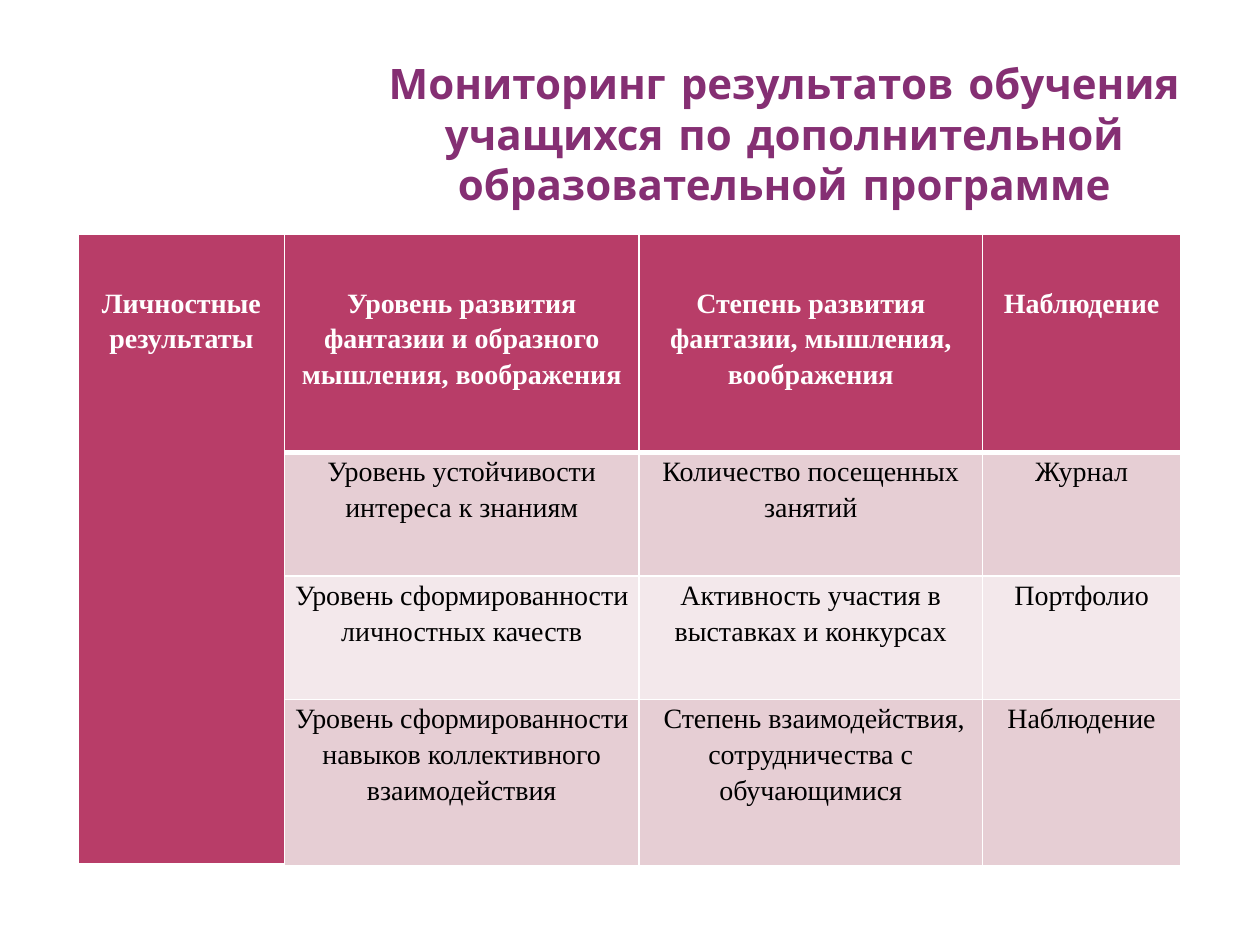
from lxml import etree
from pptx import Presentation
from pptx.dml.color import RGBColor
from pptx.enum.text import MSO_ANCHOR, PP_ALIGN
from pptx.oxml.ns import qn
from pptx.util import Inches, Pt

CENTER = PP_ALIGN.CENTER
TOP = MSO_ANCHOR.TOP

PLUM = RGBColor(0x85, 0x2F, 0x73)
ROSE = RGBColor(0xB8, 0x3D, 0x68)
PINK = RGBColor(0xE6, 0xCE, 0xD4)
PALE = RGBColor(0xF3, 0xE8, 0xEB)
WHITE = RGBColor(0xFF, 0xFF, 0xFF)
BLACK = RGBColor(0, 0, 0)

TITLE = "Мониторинг результатов обучения учащихся по дополнительной образовательной программе"
ROWS = [
    ["Личностные результаты", "Уровень развития фантазии и образного мышления, воображения",
     "Степень развития фантазии, мышления, воображения", "Наблюдение"],
    ["", "Уровень устойчивости интереса к знаниям", "Количество посещенных занятий", "Журнал"],
    ["", "Уровень сформированности личностных качеств",
     "Активность участия в выставках и конкурсах", "Портфолио"],
    ["", "Уровень сформированности навыков коллективного взаимодействия",
     " Степень взаимодействия, сотрудничества с обучающимися", "Наблюдение"],
]
WIDTHS = [1.64, 2.81, 2.73, 1.57]
HEIGHTS = [1.73, 0.98, 0.98, 1.32]
FILLS = [ROSE, PINK, PALE, PINK]


def write(frame, text, font="Times New Roman", size=16, color=BLACK, bold=False, line=1.0, after=0):
    """Put one centred paragraph of formatted text in a frame."""
    par = frame.paragraphs[0]
    par.alignment = CENTER
    par.line_spacing = line
    par.space_before = Pt(0)
    par.space_after = Pt(after)
    run = par.add_run()
    run.text = text
    run.font.name = font
    run.font.size = Pt(size)
    run.font.bold = bold
    run.font.color.rgb = color


def edge(cell, top, bottom):
    """Draw white borders around a cell, with widths in points."""
    props = cell._tc.get_or_add_tcPr()
    for side, width in (("L", 1), ("R", 1), ("T", top), ("B", bottom)):
        line = etree.SubElement(props, qn("a:ln" + side), w=str(Pt(width)))
        fill = etree.SubElement(line, qn("a:solidFill"))
        etree.SubElement(fill, qn("a:srgbClr"), val=str(WHITE))


def add_title(slide, left, top, width, height):
    """Place the heading in the title placeholder."""
    title = slide.shapes.title
    title.left, title.top, title.width, title.height = left, top, width, height
    frame = title.text_frame
    frame.word_wrap = True
    frame.vertical_anchor = TOP
    write(frame, TITLE, font="Comic Neue", size=24, color=PLUM, bold=True)


def add_grid(slide, left, top, width, height):
    """Place the results table with its merged first column."""
    table = slide.shapes.add_table(len(ROWS), len(WIDTHS), left, top, width, height).table
    for col, size in zip(table.columns, WIDTHS):
        col.width = Inches(size)
    for r, texts in enumerate(ROWS):
        table.rows[r].height = Inches(HEIGHTS[r])
        head = r == 0
        for c, text in enumerate(texts):
            cell = table.cell(r, c)
            cell.margin_left = cell.margin_right = Inches(0.07)
            cell.margin_top = Inches(0.39 if head else 0)
            cell.margin_bottom = 0
            cell.vertical_anchor = TOP
            edge(cell, 3 if r == 1 and c else 1, 3 if head else 1)
            cell.fill.solid()
            cell.fill.fore_color.rgb = FILLS[r] if c else ROSE
            if text:
                write(cell.text_frame, text, color=WHITE if head else BLACK,
                      bold=head, line=1.15, after=10)
    table.cell(0, 0).merge(table.cell(len(ROWS) - 1, 0))


def main():
    """Build the slide and save it."""
    deck = Presentation()
    deck.slide_width, deck.slide_height = Inches(10), Inches(7.5)
    slide = deck.slides.add_slide(deck.slide_layouts[5])
    add_title(slide, Inches(2.45), Inches(0.41), Inches(7.55), Inches(1.31))
    add_grid(slide, Inches(0.62), Inches(1.86), Inches(sum(WIDTHS)), Inches(sum(HEIGHTS)))
    deck.save("out.pptx")


if __name__ == "__main__":
    main()
